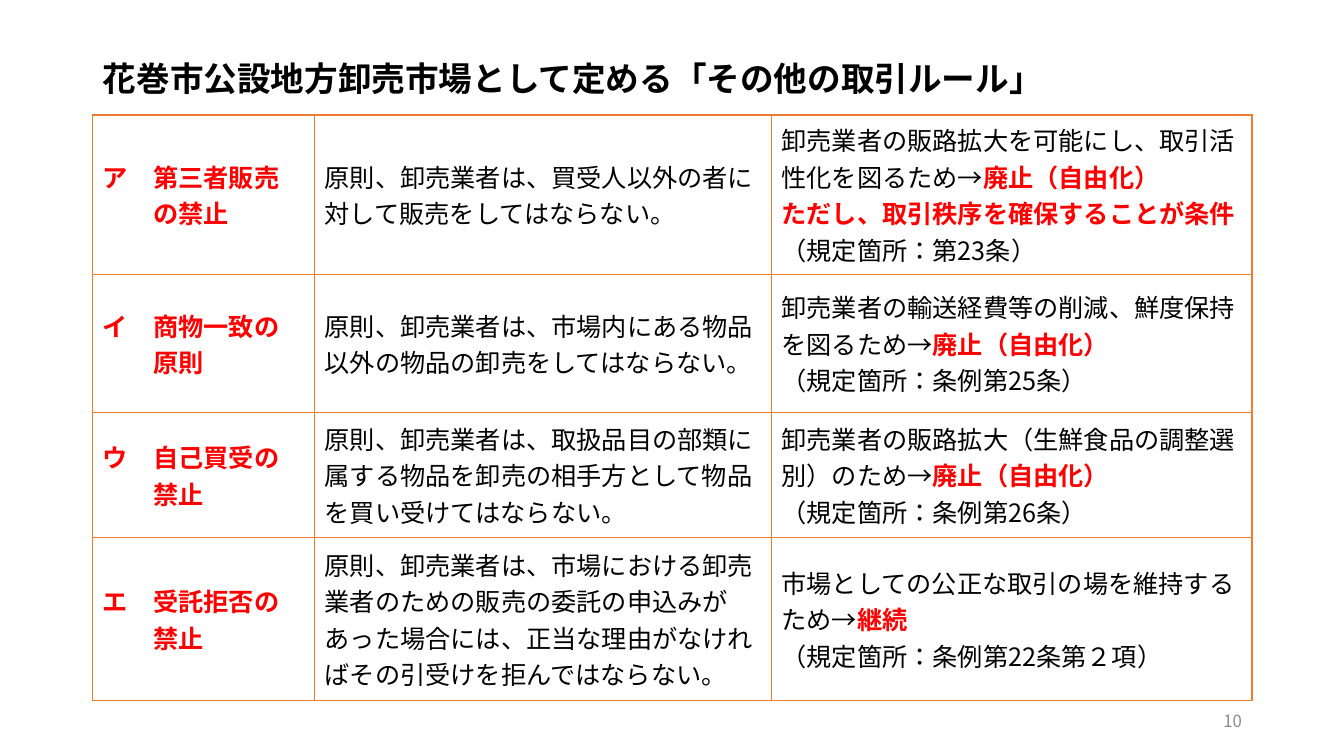
"""Build the slide on the trading rules of the wholesale market."""
from lxml.etree import SubElement
from pptx import Presentation
from pptx.dml.color import RGBColor
from pptx.enum.lang import MSO_LANGUAGE_ID
from pptx.enum.text import MSO_ANCHOR, MSO_AUTO_SIZE, PP_ALIGN
from pptx.oxml.ns import qn
from pptx.util import Cm, Pt

FONT = "Noto Sans CJK JP"
HUES = {"text": "000000", "key": "FF0000", "page": "8C8C8C", "edge": "ED7D31"}


def add_run(para, text, size, hue, bold=False):
    run = para.add_run()
    run.text = text
    font = run.font
    font.size, font.bold, font.name = Pt(size), bold, FONT
    font.color.rgb = RGBColor.from_string(HUES[hue])
    font.language_id = MSO_LANGUAGE_ID.JAPANESE
    SubElement(run._r.get_or_add_rPr(), qn("a:ea"), typeface=FONT)


def add_edges(cell):
    props = cell._tc.get_or_add_tcPr()
    for side in ("lnL", "lnR", "lnT", "lnB"):
        line = SubElement(props, qn(f"a:{side}"), w=str(Pt(1)))
        fill = SubElement(line, qn("a:solidFill"))
        SubElement(fill, qn("a:srgbClr"), val=HUES["edge"])


deck = Presentation()
deck.slide_width, deck.slide_height = Cm(33.87), Cm(19.05)
slide = deck.slides.add_slide(deck.slide_layouts[5])

title = slide.shapes.title
title.left, title.top, title.width, title.height = Cm(2.34), Cm(1.45), Cm(29.21), Cm(1.7)
frame = title.text_frame
frame.word_wrap = True
frame.auto_size = MSO_AUTO_SIZE.NONE
frame.vertical_anchor = MSO_ANCHOR.TOP
para = frame.paragraphs[0]
para.alignment = PP_ALIGN.LEFT
para.line_spacing, para.space_before = 0.9, Pt(10)
add_run(para, "花巻市公設地方卸売市場として定める「その他の取引ルール」", 24, "text", True)

FREE = ("廃止（自由化）", "key")
rules = [
    (
        ("ア　第三者販売", "の禁止"),
        "原則、卸売業者は、買受人以外の者に対して販売をしてはならない。",
        [
            [("卸売業者の販路拡大を可能にし、取引活性化を図るため→", "text"), FREE],
            [("ただし、取引秩序を確保することが条件", "key")],
            [("（規定箇所：第23条）", "text")],
        ],
    ),
    (
        ("イ　商物一致の", "原則"),
        "原則、卸売業者は、市場内にある物品以外の物品の卸売をしてはならない。",
        [
            [("卸売業者の輸送経費等の削減、鮮度保持を図るため→", "text"), FREE],
            [("（規定箇所：条例第25条）", "text")],
        ],
    ),
    (
        ("ウ　自己買受の", "禁止"),
        "原則、卸売業者は、取扱品目の部類に属する物品を卸売の相手方として物品を買い受けてはならない。",
        [
            [("卸売業者の販路拡大（生鮮食品の調整選別）のため→", "text"), FREE],
            [("（規定箇所：条例第26条）", "text")],
        ],
    ),
    (
        ("エ　受託拒否の", "禁止"),
        "原則、卸売業者は、市場における卸売業者のための販売の委託の申込みがあった場合には、"
        "正当な理由がなければその引受けを拒んではならない。",
        [
            [("市場としての公正な取引の場を維持するため→", "text"), ("継続", "key")],
            [("（規定箇所：条例第22条第２項）", "text")],
        ],
    ),
]
widths = [5.59, 11.51, 12.11]
heights = [4.01, 3.48, 3.15, 4.11]

table = slide.shapes.add_table(
    len(rules), len(widths), Cm(2.34), Cm(2.9), Cm(sum(widths)), Cm(sum(heights))
).table
table.first_row = table.horz_banding = False
for col, width in zip(table.columns, widths):
    col.width = Cm(width)

for row, height, (names, rule, change) in zip(table.rows, heights, rules):
    row.height = Cm(height)
    label = [[(name, "key")] for name in names]
    for cell, paras in zip(row.cells, (label, [[(rule, "text")]], change)):
        cell.vertical_anchor = MSO_ANCHOR.MIDDLE
        add_edges(cell)
        cell.fill.background()
        frame = cell.text_frame
        for num, runs in enumerate(paras):
            para = frame.add_paragraph() if num else frame.paragraphs[0]
            for text, hue in runs:
                add_run(para, text, 18, hue, hue == "key")
    indent = row.cells[0].text_frame.paragraphs[1]._p.get_or_add_pPr()
    indent.set("marL", str(Cm(1.27)))

page = slide.shapes.add_textbox(Cm(23.93), Cm(17.65), Cm(7.62), Cm(1.02)).text_frame
page.word_wrap = True
page.vertical_anchor = MSO_ANCHOR.MIDDLE
para = page.paragraphs[0]
para.alignment = PP_ALIGN.RIGHT
add_run(para, "10", 12, "page")

deck.save("out.pptx")
